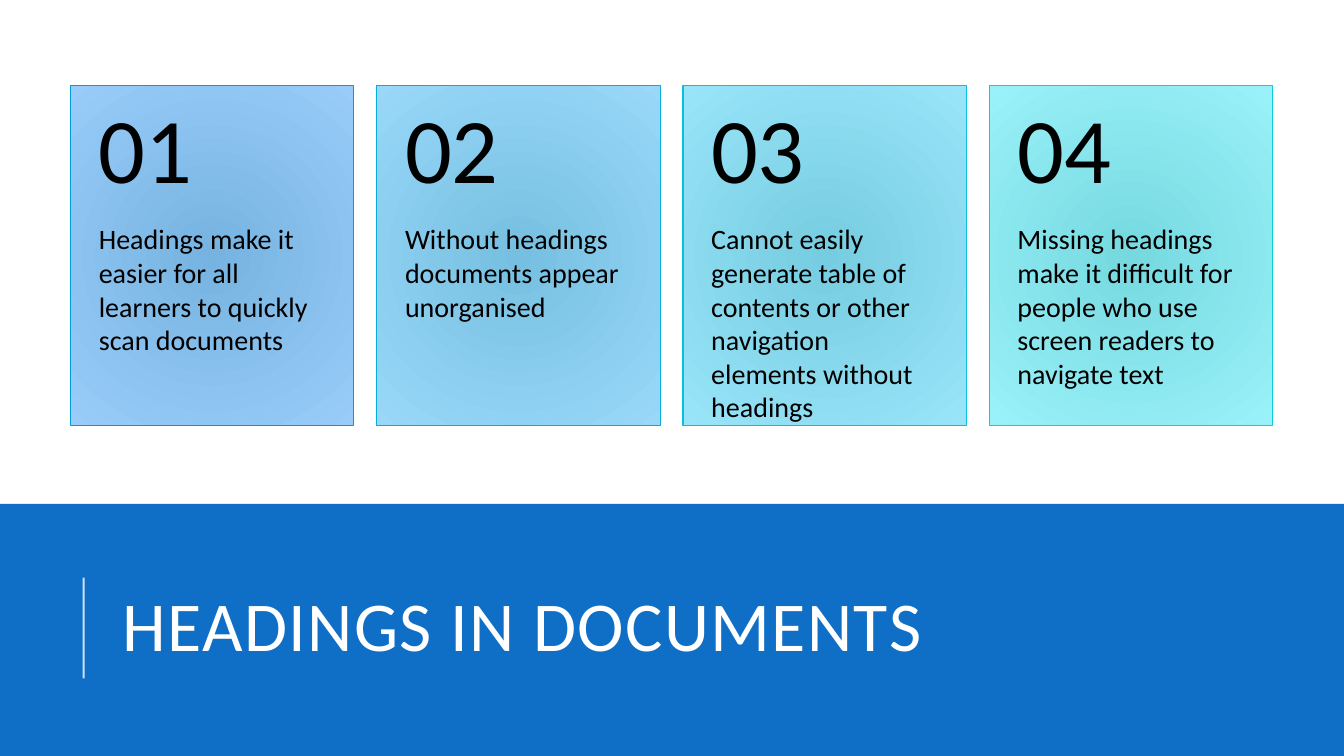
from dataclasses import dataclass

import pptx
import pptx.dml.color
import pptx.enum.shapes
import pptx.enum.text
import pptx.oxml
import pptx.oxml.ns
import pptx.util
from lxml import etree

Inches = pptx.util.Inches
Pt = pptx.util.Pt
qn = pptx.oxml.ns.qn
Anchor = pptx.enum.text.MSO_ANCHOR

FONT = "Calibri"
BLUE, WHITE, BLACK = "0F6FC6", "FFFFFF", "000000"
CARD_LEFT, CARD_TOP, CARD_STEP = 0.7, 0.85, 3.037
CARD_W, CARD_H, NUMBER_H = 2.81, 3.37, 1.35


@dataclass
class Card:
    text: str
    center: str
    edge: str
    border: str


CARDS = [
    Card("Headings make it easier for all learners to quickly scan documents",
         "76B3E0", "99CCF9", "009DD9"),
    Card("Without headings documents appear unorganised",
         "76BFE0", "99D8F9", "04AFD9"),
    Card("Cannot easily generate table of contents or other navigation elements without headings",
         "76CCE0", "99E4F9", "07C0D9"),
    Card("Missing headings make it difficult for people who use screen readers to navigate text",
         "76D9E0", "9AF1F9", "0BD0D9"),
]


def rgb(value: str) -> pptx.dml.color.RGBColor:
    return pptx.dml.color.RGBColor.from_string(value)


def add_rect(s, x: float, y: float, w: float, h: float):
    sp = s.shapes.add_shape(pptx.enum.shapes.MSO_SHAPE.RECTANGLE,
                            Inches(x), Inches(y), Inches(w), Inches(h))
    sp.shadow.inherit = False
    return sp


def fill_radial(sp, center: str, edge: str) -> None:
    sp.fill.gradient()
    for stop, color, position in zip(sp.fill.gradient_stops, (center, edge), (0, 1)):
        stop.color.rgb = rgb(color)
        stop.position = position
    grad = sp.fill._xPr.find(qn("a:gradFill"))
    lin = grad.find(qn("a:lin"))
    radial = etree.Element(qn("a:path"), path="circle")
    etree.SubElement(radial, qn("a:fillToRect"),
                     dict.fromkeys("ltrb", "100000"))
    grad.replace(lin, radial)


def add_text(s, text: str, x: float, y: float, w: float, h: float, size: float,
             color: str, insets: tuple[float, float, float, float],
             anchor=Anchor.TOP, spacing: float = 1.0):
    """Add a one-paragraph box; insets run left, top, right, bottom."""
    tf = s.shapes.add_textbox(Inches(x), Inches(y), Inches(w), Inches(h)).text_frame
    tf.word_wrap = True
    tf.vertical_anchor = anchor
    (tf.margin_left, tf.margin_top,
     tf.margin_right, tf.margin_bottom) = map(Inches, insets)
    p = tf.paragraphs[0]
    p.text = text
    p.line_spacing = spacing
    p.font.name = FONT
    p.font.size = Pt(size)
    p.font.color.rgb = rgb(color)
    return p


def add_card(s, index: int, card: Card) -> None:
    x = CARD_LEFT + index * CARD_STEP
    sp = add_rect(s, x, CARD_TOP, CARD_W, CARD_H)
    fill_radial(sp, card.center, card.edge)
    sp.line.color.rgb = rgb(card.border)
    sp.line.width = Pt(0.75)
    add_text(s, card.text, x, CARD_TOP + NUMBER_H, CARD_W, CARD_H - NUMBER_H,
             20, BLACK, (0.28, 0, 0.28, 0.36))
    add_text(s, f"{index + 1:02}", x, CARD_TOP, CARD_W, NUMBER_H,
             66, BLACK, (0.28, 0.18, 0.28, 0.18), Anchor.MIDDLE, 0.9)


def add_title_band(s) -> None:
    band = add_rect(s, 0, 5, 13.33, 2.5)
    band.fill.solid()
    band.fill.fore_color.rgb = rgb(BLUE)
    band.line.fill.background()

    rule = s.shapes.add_connector(pptx.enum.shapes.MSO_CONNECTOR.STRAIGHT,
                                  Inches(0.83), Inches(6.73), Inches(0.83), Inches(5.73))
    rule.line.color.rgb = rgb(WHITE)
    rule.line.width = Pt(1.5)
    color = rule.line.fill._xPr.find(".//" + qn("a:srgbClr"))
    etree.SubElement(color, qn("a:alpha"), val="80000")
    etree.SubElement(rule._element.spPr, qn("a:effectLst"))

    p = add_text(s, "HEADINGS IN DOCUMENTS", 1.12, 5.44, 10.63, 1.64, 50, WHITE,
                 (0.1, 0.05, 0.1, 0.05), Anchor.MIDDLE, 0.8)
    p.runs[0]._r.get_or_add_rPr().set("spc", "100")


def main() -> None:
    prs = pptx.Presentation()
    prs.slide_width, prs.slide_height = Inches(13.33), Inches(7.5)
    s = prs.slides.add_slide(prs.slide_layouts[6])
    for index, card in enumerate(CARDS):
        add_card(s, index, card)
    add_title_band(s)
    prs.save("out.pptx")


if __name__ == "__main__":
    main()
